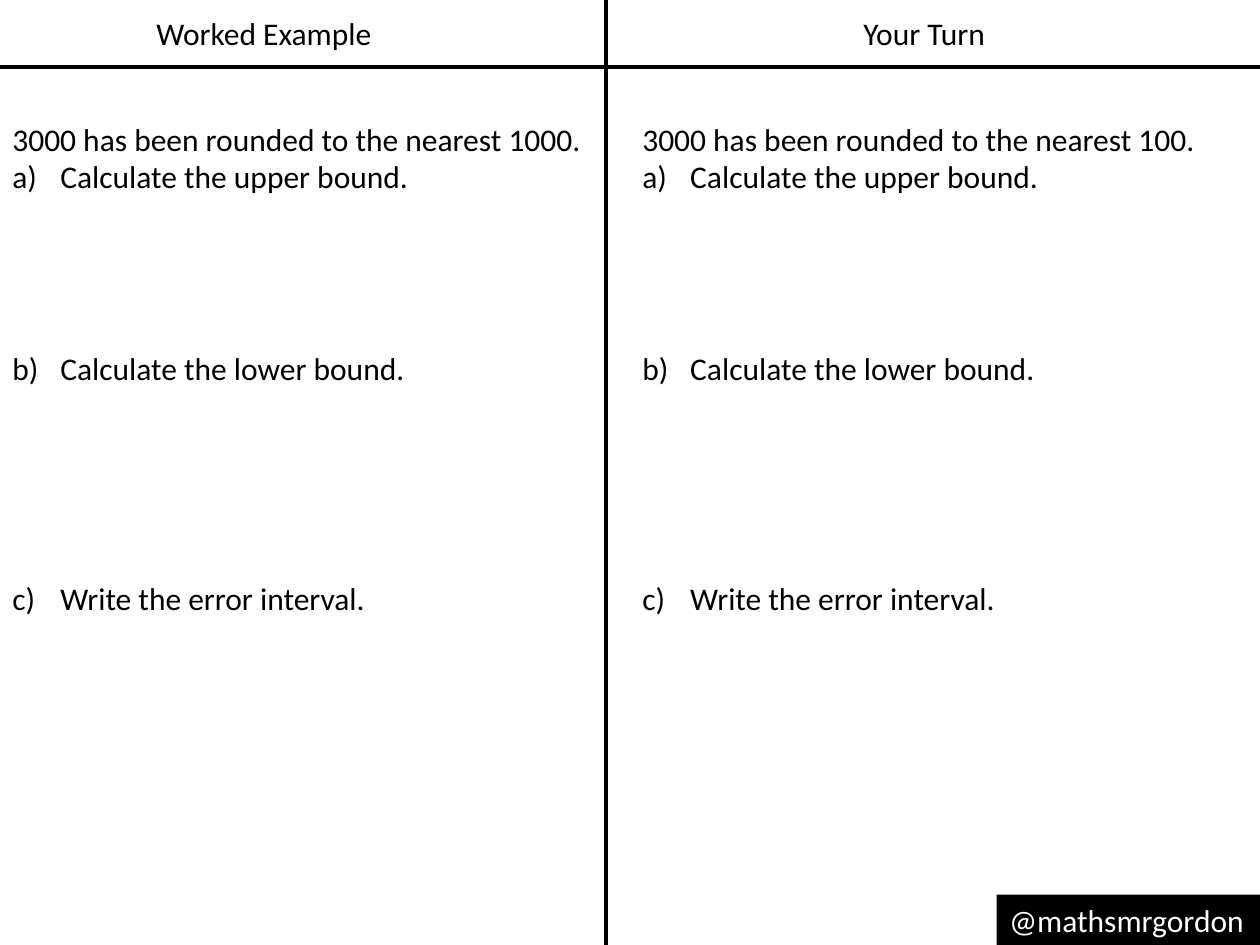
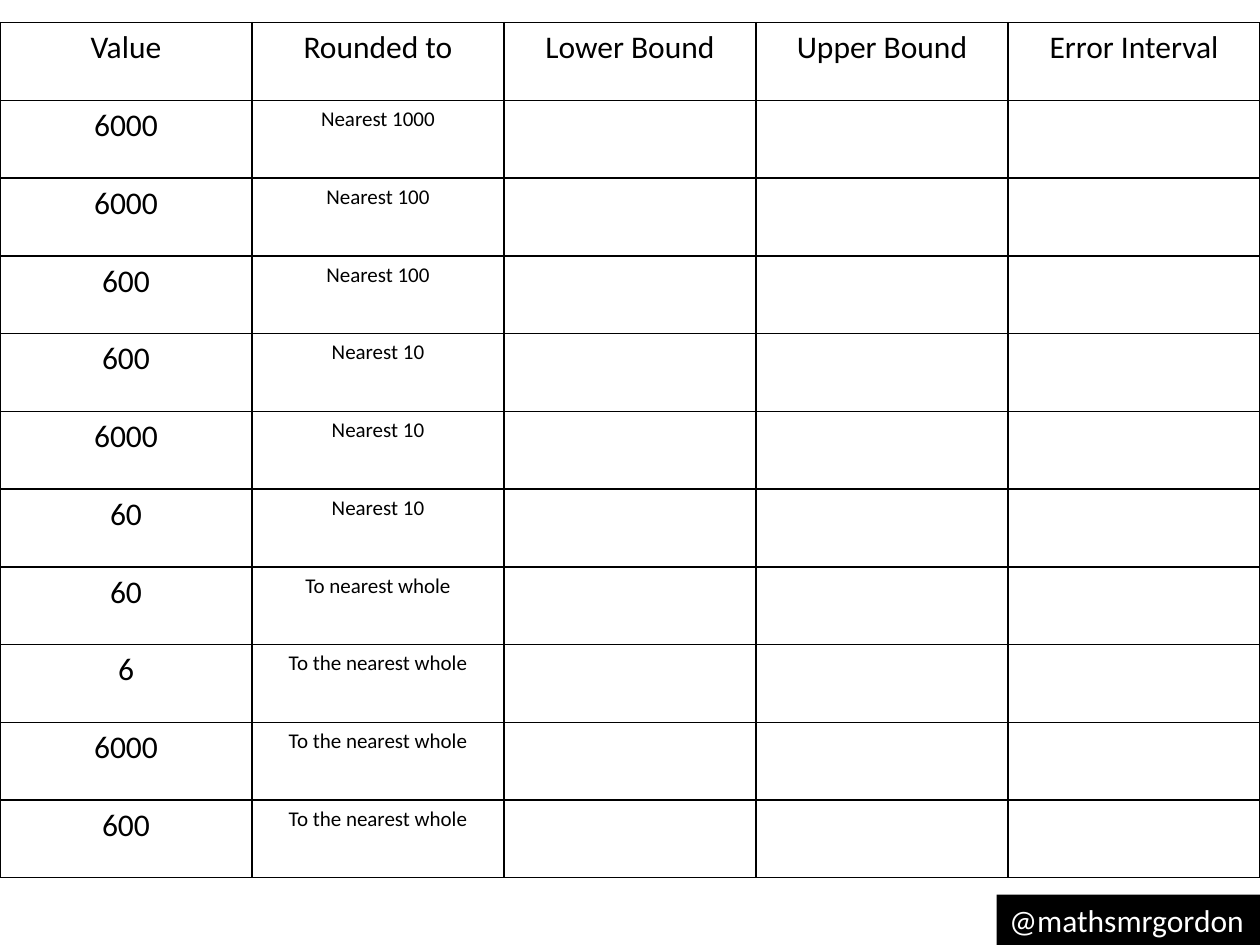
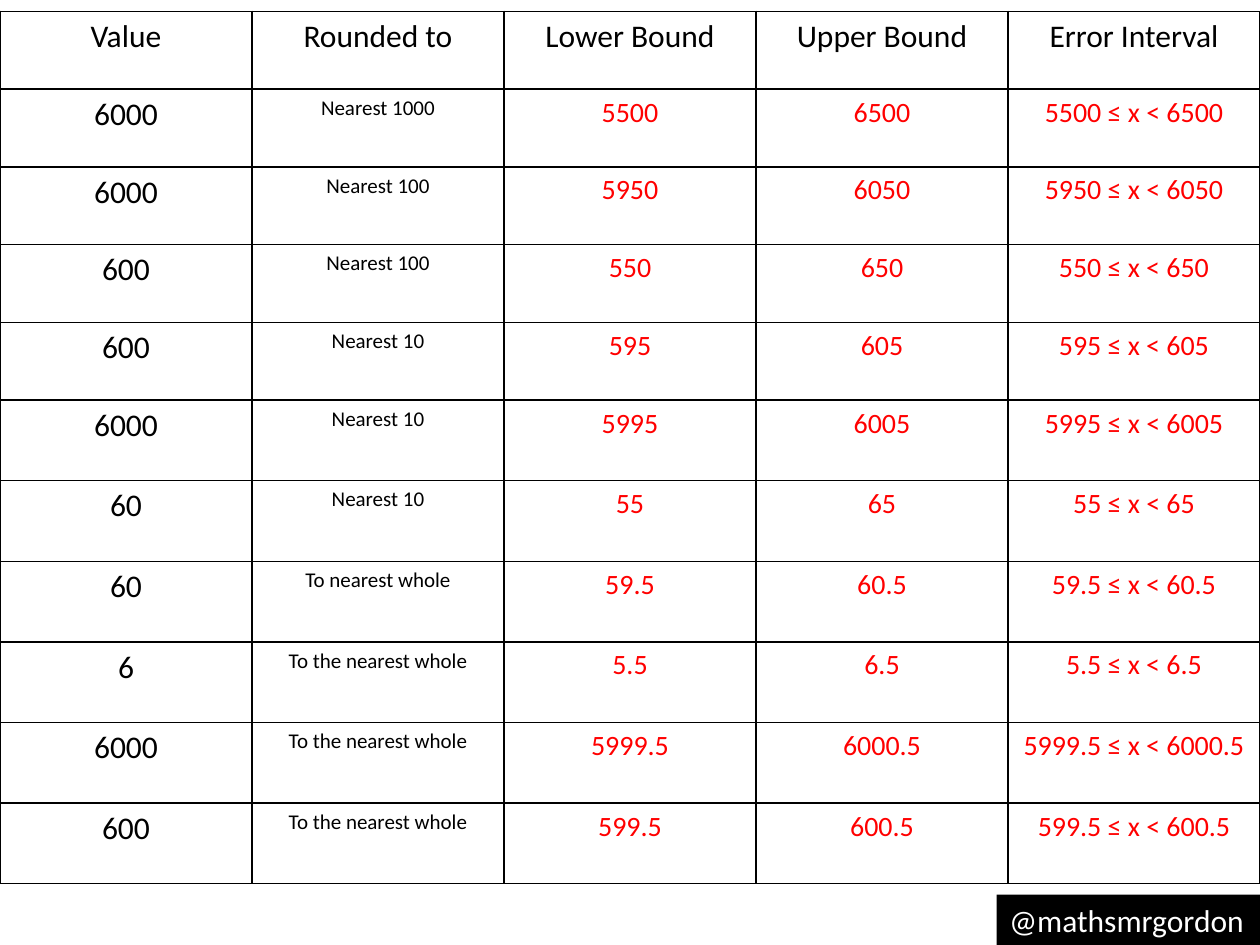
from lxml import etree
from pptx import Presentation
from pptx.dml.color import RGBColor
from pptx.enum.shapes import MSO_CONNECTOR, MSO_SHAPE
from pptx.enum.text import MSO_ANCHOR, PP_ALIGN
from pptx.oxml.ns import qn
from pptx.util import Inches, Pt

BLACK = RGBColor(0x00, 0x00, 0x00)
WHITE = RGBColor(0xFF, 0xFF, 0xFF)
RED = RGBColor(0xFF, 0x00, 0x00)
FONT = "Calibri"


def format_text(paragraph, size=18, color=BLACK, align=PP_ALIGN.LEFT):
    paragraph.alignment = align
    for run in paragraph.runs:
        run.font.name = FONT
        run.font.size = Pt(size)
        run.font.color.rgb = color


def add_border(cell):
    properties = cell._tc.get_or_add_tcPr()
    for side in ("lnL", "lnR", "lnT", "lnB"):
        line = etree.SubElement(properties, qn(f"a:{side}"), w=str(Pt(1)))
        fill = etree.SubElement(line, qn("a:solidFill"))
        etree.SubElement(fill, qn("a:srgbClr"), val=str(BLACK))


presentation = Presentation()
presentation.slide_width = Inches(10)
presentation.slide_height = Inches(7.5)
blank_layout = presentation.slide_layouts[6]
example_slide, exercise_slide, answer_slide = [
    presentation.slides.add_slide(blank_layout) for _ in range(3)]

# Column headings
for heading, left in (("Worked Example", 1.13), ("Your Turn", 6.37)):
    box = example_slide.shapes.add_textbox(
        Inches(left), Inches(0.06), Inches(1.93), Inches(0.4))
    box.text_frame.word_wrap = True
    box.text_frame.text = heading
    format_text(box.text_frame.paragraphs[0], align=PP_ALIGN.CENTER)

# Dividing lines
for x1, y1, x2, y2 in ((4.81, 0, 4.81, 7.5), (0, 0.53, 10, 0.53)):
    divider = example_slide.shapes.add_connector(
        MSO_CONNECTOR.STRAIGHT, Inches(x1), Inches(y1), Inches(x2), Inches(y2))
    divider.line.color.rgb = BLACK
    divider.line.width = Pt(2.5)
    etree.SubElement(divider._element.spPr, qn("a:effectLst"))

# Questions, with working space before the later parts
parts = (("Calculate the upper bound.", 0),
         ("Calculate the lower bound.", 88),
         ("Write the error interval.", 110))
for left, width, unit in ((0, 4.81, 1000), (5, 4.64, 100)):
    box = example_slide.shapes.add_textbox(
        Inches(left), Inches(0.9), Inches(width), Inches(4.04))
    frame = box.text_frame
    frame.word_wrap = True
    frame.text = f"3000 has been rounded to the nearest {unit}."
    format_text(frame.paragraphs[0])
    for part, space in parts:
        paragraph = frame.add_paragraph()
        paragraph.text = part
        paragraph.space_before = Pt(space)
        format_text(paragraph)
        properties = paragraph._p.get_or_add_pPr()
        properties.set("marL", str(Inches(0.38)))
        properties.set("indent", str(Inches(-0.38)))
        etree.SubElement(properties, qn("a:buFont"), typeface="+mj-lt")
        etree.SubElement(properties, qn("a:buAutoNum"), type="alphaLcParenR")

# Tables: the exercise, then the same with answers
headers = ("Value", "Rounded to", "Lower Bound", "Upper Bound", "Error Interval")
questions = (
    (6000, "Nearest 1000", 1000),
    (6000, "Nearest 100", 100),
    (600, "Nearest 100", 100),
    (600, "Nearest 10", 10),
    (6000, "Nearest 10", 10),
    (60, "Nearest 10", 10),
    (60, "To nearest whole", 1),
    (6, "To the nearest whole", 1),
    (6000, "To the nearest whole", 1),
    (600, "To the nearest whole", 1),
)
row_height = Inches(6.79) // 11
tall_row = Inches(0.64)
tables = (
    (exercise_slide, 0.18, [row_height] * 11, False),
    (answer_slide, 0.09, [row_height] * 5 + [tall_row] * 6, True),
)
for slide, top, heights, show_answers in tables:
    rows = [headers]
    for value, rounding, unit in questions:
        answers = ("", "", "")
        if show_answers:
            lower, upper = f"{value - unit / 2:g}", f"{value + unit / 2:g}"
            answers = (lower, upper, f"{lower} ≤ x < {upper}")
        rows.append((str(value), rounding, *answers))

    table = slide.shapes.add_table(
        len(rows), len(headers), 0, Inches(top), Inches(10), sum(heights)).table
    table.first_row = False
    table.horz_banding = False
    for row_index, texts in enumerate(rows):
        table.rows[row_index].height = heights[row_index]
        for column_index, text in enumerate(texts):
            cell = table.cell(row_index, column_index)
            add_border(cell)
            cell.fill.background()
            cell.text_frame.text = text
            size, color = 18, BLACK
            if row_index > 0 and column_index == 1:
                size = 12
            elif row_index > 0 and column_index > 1:
                size, color = 16, RED
            format_text(cell.text_frame.paragraphs[0], size, color, PP_ALIGN.CENTER)

# Footer tag on every slide
for slide in presentation.slides:
    tag = slide.shapes.add_shape(
        MSO_SHAPE.RECTANGLE, Inches(7.91), Inches(7.1), Inches(2.09), Inches(0.4))
    tag.shadow.inherit = False
    tag.fill.solid()
    tag.fill.fore_color.rgb = BLACK
    tag.line.fill.background()
    tag.text_frame.word_wrap = False
    tag.text_frame.vertical_anchor = MSO_ANCHOR.MIDDLE
    tag.text_frame.text = "@mathsmrgordon"
    format_text(tag.text_frame.paragraphs[0], color=WHITE)

presentation.save("out.pptx")
